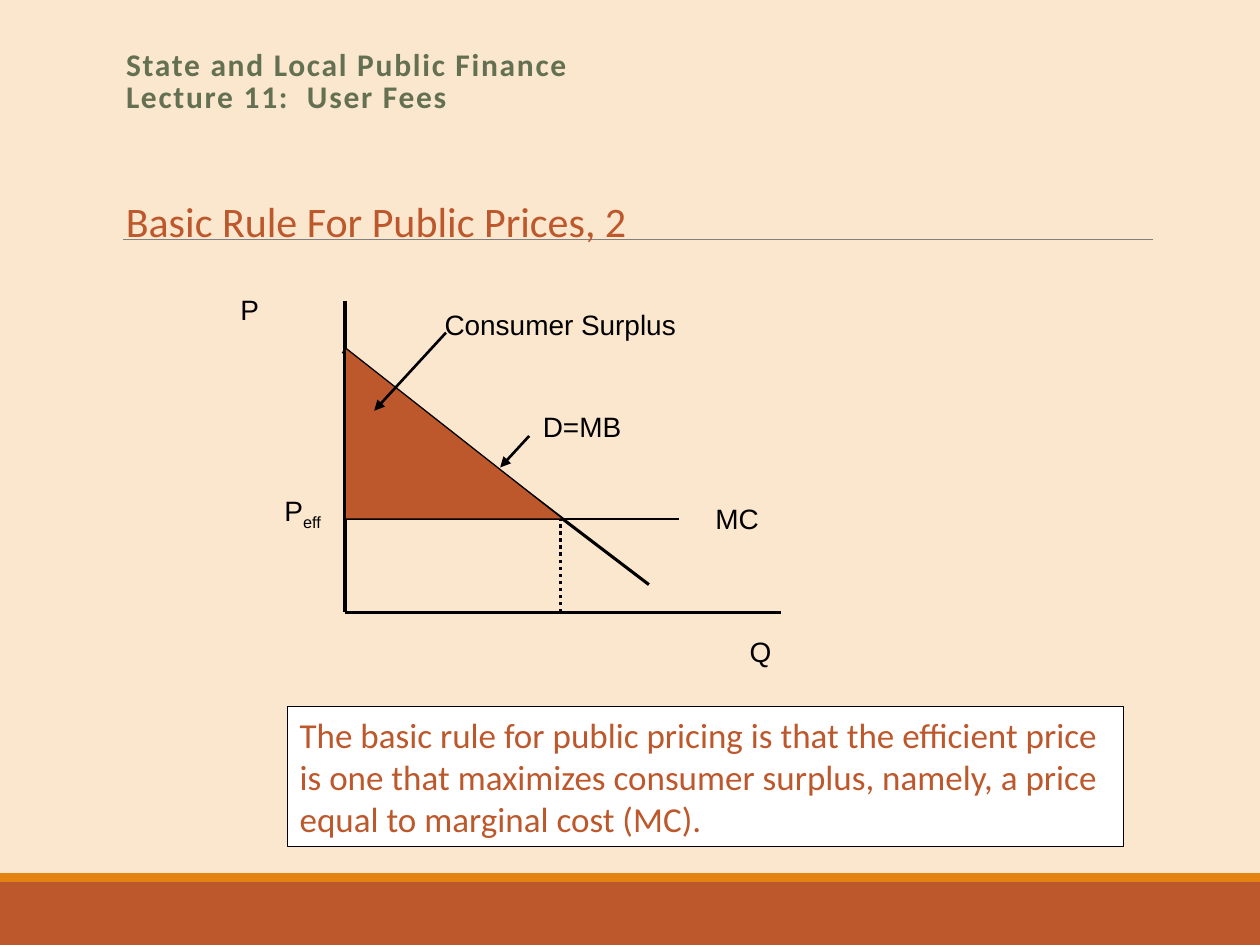
from pptx import Presentation
from pptx.dml.color import RGBColor
from pptx.enum.dml import MSO_LINE_DASH_STYLE as Dash
from pptx.enum.shapes import MSO_CONNECTOR as Connector, MSO_SHAPE as Shape
from pptx.enum.text import MSO_ANCHOR as Anchor, PP_ALIGN as Align
from pptx.oxml.ns import qn
from pptx.util import Inches, Pt
from lxml.etree import SubElement

COLORS = {
    "background": "FBE6CE",
    "rust": "BD582C",
    "orange": "E48312",
    "green": "637052",
    "rule": "808080",
    "ink": "000000",
    "paper": "FFFFFF",
}
AXIS_X, AXIS_TOP, AXIS_BASE, AXIS_END = 2.74, 2.39, 4.86, 6.2
PRICE_Y, QUANTITY_X = 4.12, 4.45
LABELS = [
    ("P", 1.81, 2.27, 0.35, 0.49),
    ("Q", 5.85, 4.99, 0.35, 0.49),
    ("MC", 5.58, 3.93, 1.31, 0.37),
    ("D=MB", 4.21, 3.2, 1.15, 0.37),
    ("Consumer Surplus", 3.43, 2.39, 2.55, 0.29),
]


def color(name):
    """Return the named colour."""
    return RGBColor.from_string(COLORS[name])


def style_text(frame, font, size, name, bold=False):
    """Format every run in a text frame."""
    for para in frame.paragraphs:
        para.alignment = Align.LEFT
        for span in para.runs:
            span.font.name = font
            span.font.size = Pt(size)
            span.font.bold = bold
            span.font.color.rgb = color(name)


def add_line(page, start, end, width, name="ink", dash=None, arrow=False):
    """Draw a straight line, optionally dashed or with an arrowhead."""
    line = page.shapes.add_connector(
        Connector.STRAIGHT, *map(Inches, start), *map(Inches, end))
    line.line.color.rgb = color(name)
    line.line.width = Pt(width)
    if dash:
        line.line.dash_style = dash
    if arrow:
        SubElement(line.line._get_or_add_ln(), qn("a:tailEnd"), type="triangle")
    SubElement(line._element.spPr, qn("a:effectLst"))


def add_block(page, kind, bounds, fill, outlined=False):
    """Draw a filled preset shape."""
    block = page.shapes.add_shape(kind, *map(Inches, bounds))
    block.shadow.inherit = False
    block.fill.solid()
    block.fill.fore_color.rgb = color(fill)
    if outlined:
        block.line.color.rgb = color("ink")
        block.line.width = Pt(0.75)
    else:
        block.line.fill.background()
    return block


def add_label(page, text, *bounds, font="Arial", size=16, name="ink", wrap=True):
    """Add a text box and return its text frame."""
    frame = page.shapes.add_textbox(*map(Inches, bounds)).text_frame
    frame.word_wrap = wrap
    frame.text = text
    style_text(frame, font, size, name)
    return frame


def add_title(page):
    """Fill the title placeholder with the lecture heading."""
    title = page.shapes.title
    title.left, title.top, title.width, title.height = map(
        Inches, (0.9, 0.33, 8.25, 0.65))
    frame = title.text_frame
    frame.text = "State and Local Public Finance\vLecture 11:  User Fees"
    frame.vertical_anchor = Anchor.MIDDLE
    style_text(frame, "Calibri", 18, "green", bold=True)
    para = frame.paragraphs[0]
    para.line_spacing = 0.85
    for span in para.runs:
        span.font._element.set("spc", "100")


def add_frame(page):
    """Draw the background, footer bands and heading rule."""
    page.background.fill.solid()
    page.background.fill.fore_color.rgb = color("background")
    add_block(page, Shape.RECTANGLE, (0, 7, 10, 0.5), "rust")
    add_block(page, Shape.RECTANGLE, (0, 6.93, 10, 0.07), "orange")
    add_line(page, (0.98, 1.9), (9.15, 1.9), 0.5, "rule")


def add_diagram(page):
    """Draw the demand and marginal cost diagram."""
    origin = (AXIS_X, AXIS_BASE)
    add_line(page, (AXIS_X, AXIS_TOP), origin, 2)
    add_line(page, origin, (AXIS_END, AXIS_BASE), 2)
    add_line(page, (2.72, 2.79), (5.15, 4.64), 1.75)
    add_line(page, (QUANTITY_X, AXIS_BASE), (QUANTITY_X, PRICE_Y), 2,
             dash=Dash.ROUND_DOT)
    add_line(page, (4.2, 3.46), (3.97, 3.71), 1.5, arrow=True)
    add_line(page, (AXIS_X, PRICE_Y), (5.39, PRICE_Y), 0.75)
    add_block(page, Shape.RIGHT_TRIANGLE, (AXIS_X, 2.76, 1.73, 1.36), "rust", True)
    for label in LABELS:
        add_label(page, *label)
    frame = add_label(page, "P", 2.16, 3.87, 1.04, 0.74)
    span = frame.paragraphs[0].add_run()
    span.text = "eff"
    style_text(frame, "Arial", 16, "ink")
    span.font._element.set("baseline", "-25000")
    add_line(page, (3.54, 2.64), (2.97, 3.26), 1.5, arrow=True)


def add_rule_box(page):
    """Add the boxed statement of the pricing rule."""
    box = add_block(page, Shape.RECTANGLE, (2.28, 5.61, 6.64, 1.11), "paper", True)
    frame = box.text_frame
    frame.word_wrap = True
    frame.vertical_anchor = Anchor.TOP
    frame.text = (
        "The basic rule for public pricing is that the efficient price is one "
        "that maximizes consumer surplus, namely, a price equal to marginal "
        "cost (MC).")
    style_text(frame, "Calibri", 20, "rust")


def main():
    """Build and save the slide."""
    deck = Presentation()
    deck.slide_width, deck.slide_height = Inches(10), Inches(7.5)
    page = deck.slides.add_slide(deck.slide_layouts[5])
    add_frame(page)
    add_diagram(page)
    add_rule_box(page)
    add_title(page)
    add_label(page, "Basic Rule For Public Prices, 2", 0.9, 1.5, 4.21, 0.5,
              font="Calibri", size=24, name="rust", wrap=False)
    deck.save("out.pptx")


if __name__ == "__main__":
    main()
